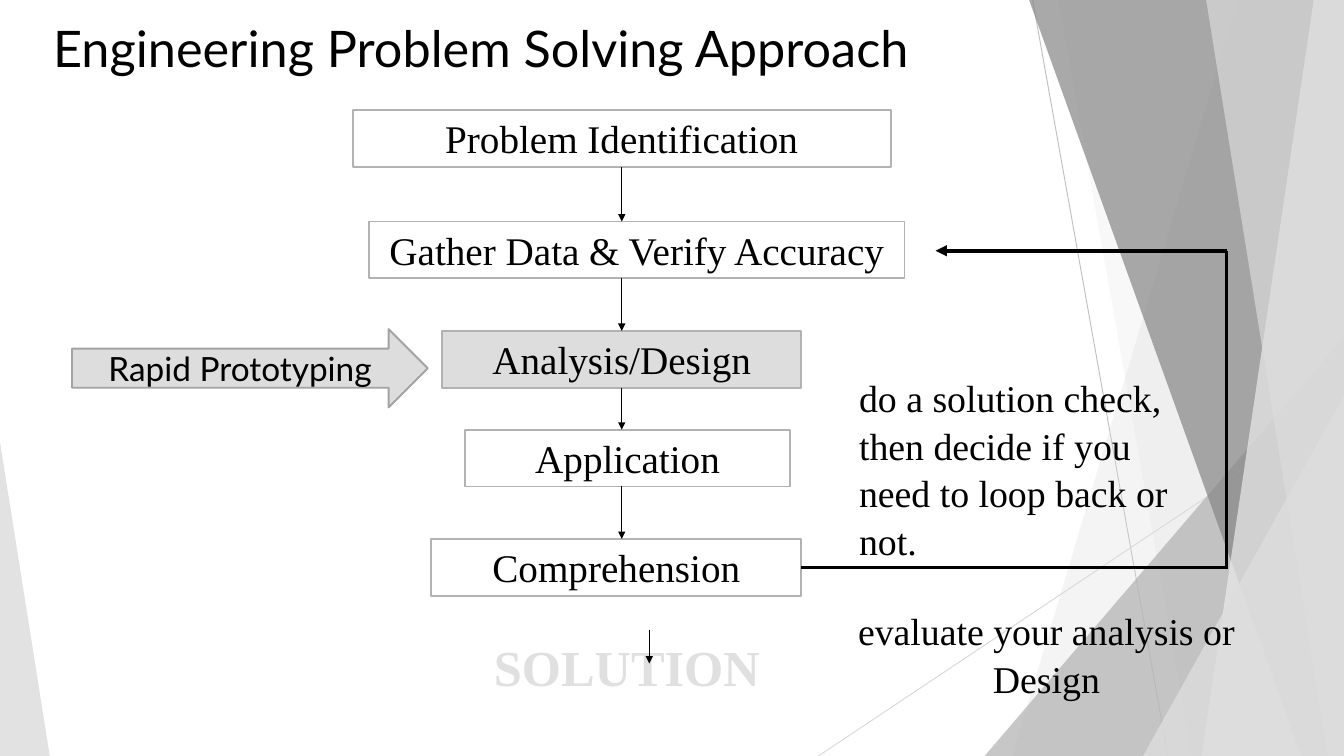
from lxml.etree import SubElement
from pptx import Presentation
from pptx.dml.color import RGBColor
from pptx.enum.shapes import MSO_CONNECTOR as CONN, MSO_SHAPE as SHAPE
from pptx.enum.text import MSO_ANCHOR as ANCHOR, PP_ALIGN as ALIGN
from pptx.oxml.ns import qn
from pptx.util import Pt

WIDTH, HEIGHT = 1087.92, 612
SERIF, SANS = "Times New Roman", "Lato"
BLACK, WHITE, PALE, GREY = "000000", "FFFFFF", "DDDDDD", "B2B2B2"
BOTTOM, TOP, RIGHT = 2, 0, 3

# text, offset down the chart, shift from its axis, width, fill
STEPS = [
    ("Problem Identification", 0, 0, 435.6, WHITE),
    ("Gather Data & Verify Accuracy", 90, 12.2, 433.4, WHITE),
    ("Analysis/Design", 178.5, 0, 290.9, PALE),
    ("Application", 258.5, 4.7, 262.8, WHITE),
    ("Comprehension", 347, -4.4, 299.5, WHITE),
]
STEP_HEIGHT = 46


def rgb(color):
    return RGBColor.from_string(color)


def paint(sp, fill, line=None, alpha=None):
    sp.shadow.inherit = False
    sp.fill.solid()
    sp.fill.fore_color.rgb = rgb(fill)
    if alpha:
        clr = sp.element.spPr.find(".//" + qn("a:srgbClr"))
        SubElement(clr, qn("a:alpha")).set("val", str(alpha * 1000))
    if line:
        sp.line.color.rgb = rgb(line)
        sp.line.width = Pt(1.5)
    else:
        sp.line.fill.background()


def write(sp, lines, size, font=SERIF, color=BLACK, align=ALIGN.CENTER,
          anchor=ANCHOR.TOP, wrap=True, bold=False, spacing=None):
    tf = sp.text_frame
    tf.word_wrap = wrap
    tf.vertical_anchor = anchor
    tf.text = "\n".join(lines)
    for p in tf.paragraphs:
        p.alignment = align
        p.line_spacing = spacing
        p.font.size, p.font.name, p.font.bold = Pt(size), font, bold
        p.font.color.rgb = rgb(color)


def add_text(s, x, y, w, h, lines, size, **style):
    sp = s.shapes.add_textbox(Pt(x), Pt(y), Pt(w), Pt(h))
    write(sp, lines, size, **style)


def add_box(s, kind, x, y, w, h, fill, line=None, alpha=None):
    sp = s.shapes.add_shape(kind, Pt(x), Pt(y), Pt(w), Pt(h))
    paint(sp, fill, line, alpha)
    return sp


def add_line(s, x1, y1, x2, y2, color=BLACK, width=0.75, arrow=False):
    c = s.shapes.add_connector(CONN.STRAIGHT, Pt(x1), Pt(y1), Pt(x2), Pt(y2))
    c.line.color.rgb = rgb(color)
    c.line.width = Pt(width)
    sp_pr = c.element.spPr
    if arrow:
        SubElement(sp_pr.find(qn("a:ln")), qn("a:tailEnd")).set("type", "triangle")
    SubElement(sp_pr, qn("a:effectLst"))
    return c


def band(s, top_x, bottom_x, fill, alpha):
    """Fill the slide's full height from a slanted left edge to the right side."""
    fb = s.shapes.build_freeform(Pt(top_x), 0)
    fb.add_line_segments([(Pt(WIDTH), 0), (Pt(WIDTH), Pt(HEIGHT)),
                          (Pt(bottom_x), Pt(HEIGHT))], close=True)
    paint(fb.convert_to_shape(), fill, alpha=alpha)


def wedge(s, x, w, h, apex, fill, alpha):
    """Stand a right triangle on the slide's bottom edge."""
    sp = add_box(s, SHAPE.ISOSCELES_TRIANGLE, x, HEIGHT - h, w, h, fill, alpha=alpha)
    sp.adjustments[0] = apex


def backdrop(s):
    add_line(s, 835.9, 0, 945.4, HEIGHT, "BFBFBF")
    add_line(s, WIDTH, 328.3, 662.4, HEIGHT, "D9D9D9")
    band(s, 1002.24, 819.36, PALE, 30)
    band(s, 856.8, 964.8, PALE, 20)
    wedge(s, WIDTH - 290.9, 290.9, 339.8, 1, GREY, 72)
    band(s, 833.04, 1053.36, "858585", 70)
    band(s, 1063.44, 972.72, "EBEBEB", 70)
    band(s, 976.32, 1074.96, PALE, 65)
    wedge(s, WIDTH - 162.7, 162.7, 291.6, 1, PALE, 80)
    wedge(s, 0, 40.3, 254.2, 0, PALE, 85)


def title(s, x, y, w, h):
    sp = s.shapes.title
    sp.left, sp.top, sp.width, sp.height = Pt(x), Pt(y), Pt(w), Pt(h)
    write(sp, ["Engineering Problem Solving Approach"], 40.8, SANS, align=ALIGN.LEFT)
    sp.text_frame.margin_left = Pt(15)
    sp.element.getparent().append(sp.element)  # in front of the backdrop


def flowchart(s, axis, top):
    """Stack the steps around a vertical axis and return the last one."""
    boxes = []
    for text, dy, shift, w, fill in STEPS:
        sp = add_box(s, SHAPE.RECTANGLE, axis + shift - w / 2, top + dy,
                     w, STEP_HEIGHT, fill, GREY)
        write(sp, [text], 31.7)
        boxes.append(sp)
    for i in range(len(STEPS) - 1):
        c = add_line(s, axis, top + STEPS[i][1] + STEP_HEIGHT,
                     axis, top + STEPS[i + 1][1], arrow=True)
        if STEPS[i][2] == 0:
            c.begin_connect(boxes[i], BOTTOM)
        if STEPS[i + 1][2] == 0:
            c.end_connect(boxes[i + 1], TOP)
    add_text(s, axis - 163.5, top + 421.9, 335.5, 53.3, ["SOLUTION"], 40.8,
             color="E0E0E0", bold=True, wrap=False)
    add_line(s, axis + 22.3, top + 420.5, axis + 22.3, top + 447.8, arrow=True)
    return boxes[-1]


def feedback_loop(s, start, x, y, w, h):
    """Lead from the start box along the lower, right and upper sides."""
    c = add_line(s, x, y + h, x + w, y + h, width=3)
    c.begin_connect(start, RIGHT)
    add_line(s, x + w, y + h + 1.5, x + w, y, width=3)
    add_line(s, x + w, y, x + 108.7, y, width=3, arrow=True)
    add_text(s, x + 33.1, y + 283.7, 330.5, 81.4,
             ["evaluate your analysis or", "Design"], 30.6, wrap=False, spacing=1.05)
    add_text(s, x + 39.6, y + 95, 292.3, 155.5,
             ["do a solution check, then decide if you need to loop back or not."],
             30.6, align=ALIGN.LEFT, spacing=1.05)


def prototyping_arrow(s, x, y, w, h):
    sp = add_box(s, SHAPE.RIGHT_ARROW, x, y, w, h, PALE, "A3A3A3")
    write(sp, ["Rapid Prototyping"], 27, SANS, anchor=ANCHOR.MIDDLE)


def main():
    prs = Presentation()
    prs.slide_width, prs.slide_height = Pt(WIDTH), Pt(HEIGHT)
    s = prs.slides.add_slide(prs.slide_layouts[5])
    backdrop(s)
    title(s, 28, 10, 896, 82)
    comprehension = flowchart(s, 503.3, 89.3)
    feedback_loop(s, comprehension, 648.7, 203, 344.2, 256.3)
    prototyping_arrow(s, 58.3, 266.4, 288, 63.4)
    prs.save("out.pptx")


if __name__ == "__main__":
    main()
